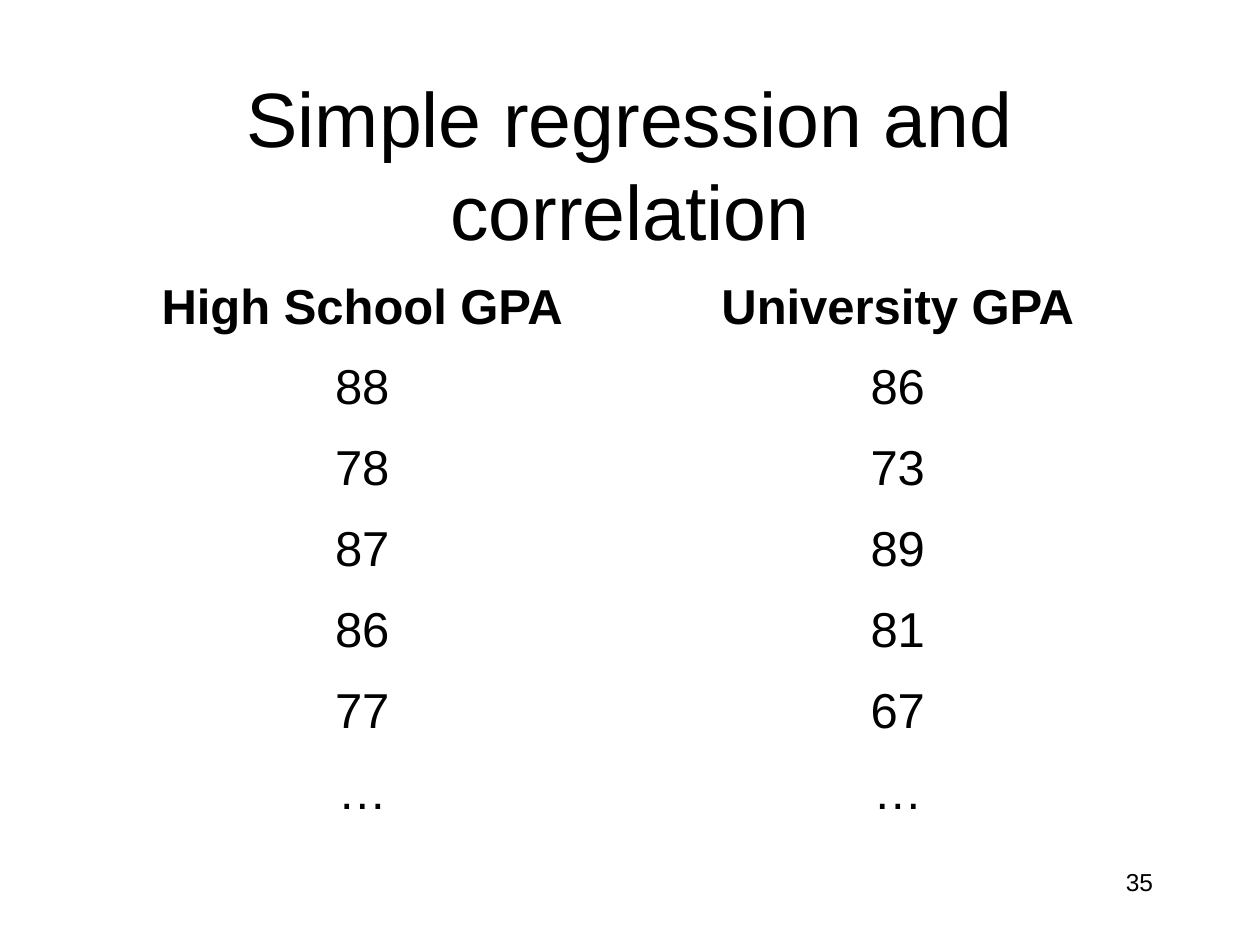
from pptx import Presentation
from pptx.dml.color import RGBColor
from pptx.enum.text import MSO_ANCHOR, MSO_AUTO_SIZE, PP_ALIGN
from pptx.util import Inches, Pt

COLORS = {"text": "000000", "background": "FFFFFF"}
GRADES = [
    ("High School GPA", "University GPA"),
    ("88", "86"),
    ("78", "73"),
    ("87", "89"),
    ("86", "81"),
    ("77", "67"),
    ("…", "…"),
]


def write(frame, text, size, align, bold=False):
    frame.text = text
    para = frame.paragraphs[0]
    para.alignment = align
    font = para.runs[0].font
    font.name = "Arial"
    font.size = Pt(size)
    font.bold = bold
    font.color.rgb = RGBColor.from_string(COLORS["text"])


deck = Presentation()
deck.slide_width = Inches(10)
deck.slide_height = Inches(7.5)
page = deck.slides.add_slide(deck.slide_layouts[5])
page.background.fill.solid()
page.background.fill.fore_color.rgb = RGBColor.from_string(COLORS["background"])

title = page.shapes.title
title.left, title.top = Inches(0.75), Inches(0.67)
title.width, title.height = Inches(8.5), Inches(1.25)
title.text_frame.word_wrap = True
title.text_frame.auto_size = MSO_AUTO_SIZE.NONE
title.text_frame.vertical_anchor = MSO_ANCHOR.MIDDLE
write(title.text_frame, "Simple regression and correlation", 44, PP_ALIGN.CENTER)

table = page.shapes.add_table(
    len(GRADES), 2, Inches(0.75), Inches(2.17), Inches(8.5), Inches(4.5)
).table
table.first_row = False
table.horz_banding = False
for row, grades in enumerate(GRADES):
    for column, grade in enumerate(grades):
        cell = table.cell(row, column)
        cell.fill.background()
        write(cell.text_frame, grade, 28, PP_ALIGN.CENTER, bold=row == 0)

number_box = page.shapes.add_textbox(Inches(7.17), Inches(6.83), Inches(2.08), Inches(0.5))
number_box.text_frame.word_wrap = True
write(number_box.text_frame, "35", 14, PP_ALIGN.RIGHT)

deck.save("out.pptx")
